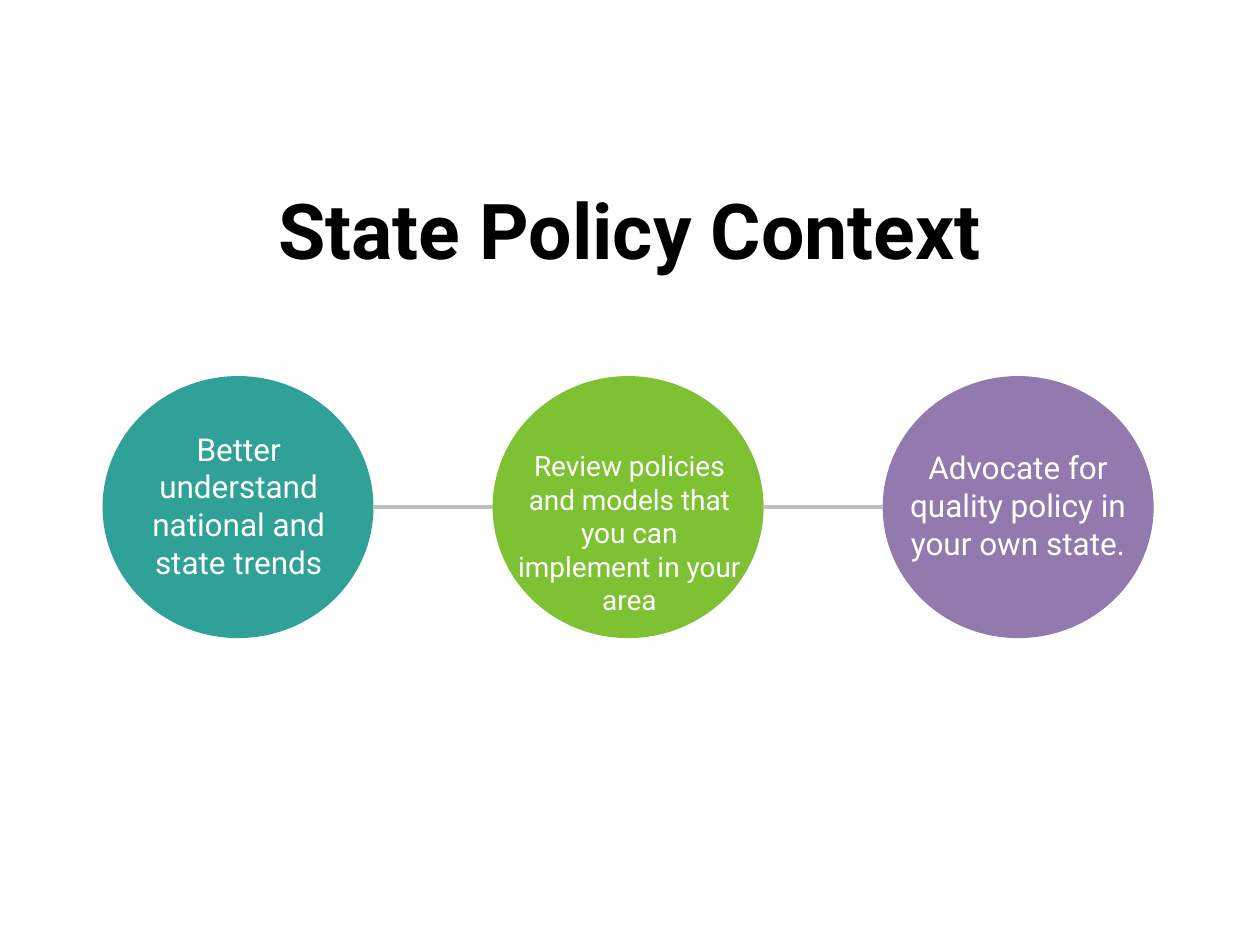
from dataclasses import dataclass

from lxml import etree
from pptx import Presentation
from pptx import util as u
from pptx.dml.color import RGBColor
from pptx.enum import shapes, text
from pptx.oxml.ns import qn
from pptx.slide import Slide

COLORS = {
    "teal": "2FA196",
    "green": "7EC234",
    "purple": "927AAE",
    "grey": "BFBFBF",
    "white": "FFFFFF",
    "black": "000000",
}
FONT = "Roboto"
FIRST_LEFT, CIRCLE_TOP, PITCH = 59, 215.3, 222.9
CIRCLE_WIDTH, CIRCLE_HEIGHT = 154.1, 149


@dataclass
class Label:
    wording: str
    left: float
    top: float
    width: float
    height: float
    size: float
    color: str = "white"
    bold: bool = False
    anchor: text.MSO_ANCHOR = text.MSO_ANCHOR.TOP


@dataclass
class Step:
    color: str
    label: Label


TITLE = Label("State Policy Context", 36, 85.7, 648, 90, 44, "black", True, text.MSO_ANCHOR.MIDDLE)
STEPS = [
    Step("teal", Label("Better understand national and state trends",
                       69.1, 241.9, 134.6, 138.2, 18)),
    Step("green", Label("Review policies and models that you can implement in your area",
                        288, 252.7, 143.3, 128.2, 16)),
    Step("purple", Label("Advocate for quality policy in your own state.",
                         504.7, 252.7, 154.1, 116.6, 18)),
]


def rgb(name: str) -> RGBColor:
    return RGBColor.from_string(COLORS[name])


def circle_left(index: int) -> float:
    return FIRST_LEFT + index * PITCH


def draw_label(page: Slide, label: Label) -> None:
    box = page.shapes.add_textbox(
        u.Pt(label.left), u.Pt(label.top), u.Pt(label.width), u.Pt(label.height))
    frame = box.text_frame
    frame.word_wrap = True
    frame.vertical_anchor = label.anchor
    frame.text = label.wording
    para = frame.paragraphs[0]
    para.alignment = text.PP_ALIGN.CENTER
    span = para.runs[0]
    span.font.name = FONT
    span.font.size = u.Pt(label.size)
    span.font.bold = label.bold
    span.font.color.rgb = rgb(label.color)


def draw_circle(page: Slide, index: int, color: str) -> None:
    circle = page.shapes.add_shape(
        shapes.MSO_SHAPE.FLOWCHART_CONNECTOR, u.Pt(circle_left(index)), u.Pt(CIRCLE_TOP),
        u.Pt(CIRCLE_WIDTH), u.Pt(CIRCLE_HEIGHT))
    circle.shadow.inherit = False
    circle.fill.solid()
    circle.fill.fore_color.rgb = rgb(color)
    circle.line.color.rgb = rgb(color)
    circle.line.width = u.Pt(0.75)


def draw_link(page: Slide, index: int) -> None:
    middle = u.Pt(CIRCLE_TOP + CIRCLE_HEIGHT / 2)
    link = page.shapes.add_connector(
        shapes.MSO_CONNECTOR.STRAIGHT, u.Pt(circle_left(index) + CIRCLE_WIDTH), middle,
        u.Pt(circle_left(index + 1)), middle)
    link.line.color.rgb = rgb("grey")
    link.line.width = u.Pt(2)
    etree.SubElement(link._element.spPr, qn("a:effectLst"))


def main() -> None:
    """Build the state policy slide."""
    deck = Presentation()
    deck.slide_width, deck.slide_height = u.Pt(720), u.Pt(540)
    page = deck.slides.add_slide(deck.slide_layouts[6])
    draw_label(page, TITLE)
    for index, step in enumerate(STEPS):
        draw_circle(page, index, step.color)
    for index in range(len(STEPS) - 1):
        draw_link(page, index)
    for step in STEPS:
        draw_label(page, step.label)
    deck.save("out.pptx")


if __name__ == "__main__":
    main()
